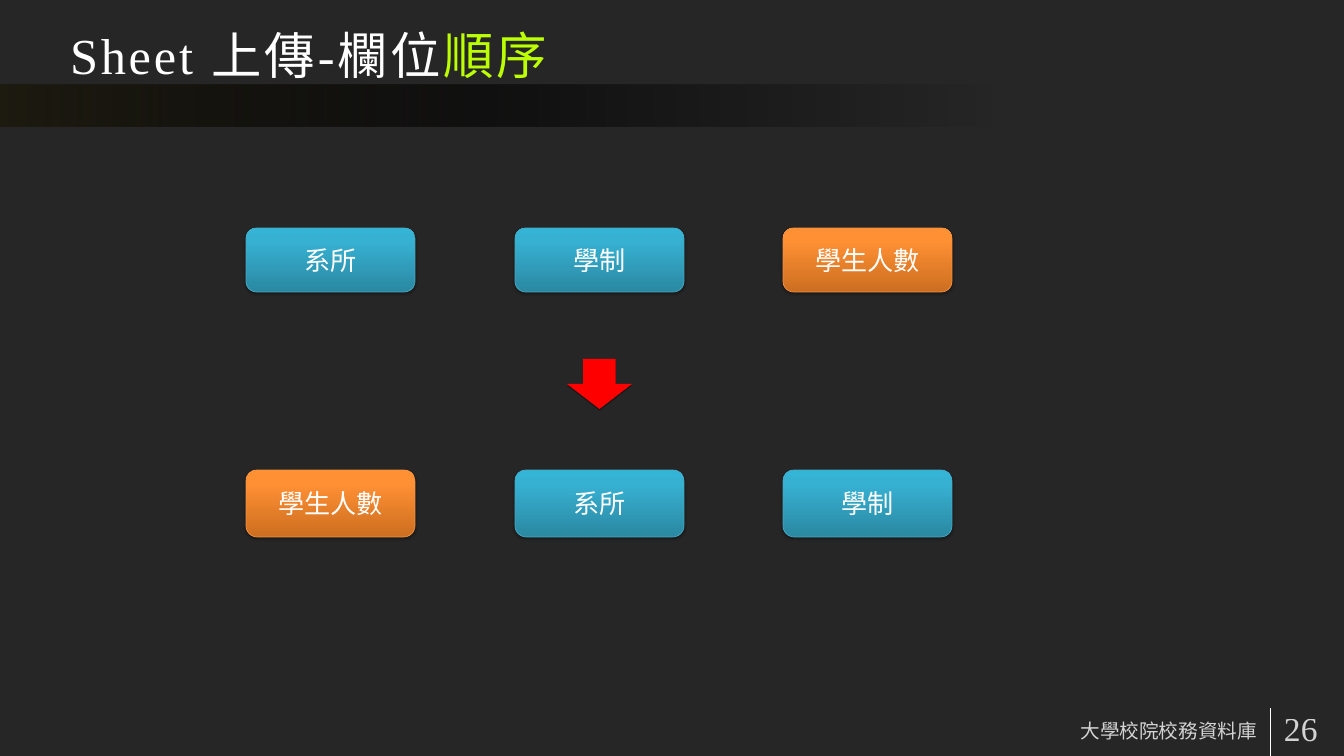
from lxml import etree
from pptx import Presentation
from pptx.dml.color import RGBColor
from pptx.enum.shapes import MSO_CONNECTOR, MSO_SHAPE
from pptx.enum.text import MSO_ANCHOR, MSO_AUTO_SIZE, PP_ALIGN
from pptx.oxml.ns import qn
from pptx.util import Emu, Pt

LEFT, CENTER, RIGHT = PP_ALIGN.LEFT, PP_ALIGN.CENTER, PP_ALIGN.RIGHT
MIDDLE, BOTTOM = MSO_ANCHOR.MIDDLE, MSO_ANCHOR.BOTTOM
SERIF, CJK = "Times New Roman", "Noto Sans CJK SC"
BACKGROUND = RGBColor(0x26, 0x26, 0x26)
WHITE = RGBColor(0xFF, 0xFF, 0xFF)
BLACK = RGBColor(0, 0, 0)
LIME = RGBColor(0xBB, 0xFF, 0x02)
RED = RGBColor(0xFF, 0, 0)
BLUE_LINE = RGBColor(0x46, 0xAA, 0xC5)
ORANGE_LINE = RGBColor(0xF6, 0x92, 0x40)

# Gradient stops: position %, colour, opacity %
BAND = [(0, RGBColor(0x1E, 0x1C, 0x11), 100), (39, BLACK, 54), (74, BLACK, 0)]
BLUE = [(0, RGBColor(0x2A, 0x88, 0xA2), 100), (80, RGBColor(0x37, 0xB1, 0xD2), 100),
        (100, RGBColor(0x34, 0xB4, 0xD6), 100)]
ORANGE = [(0, RGBColor(0xCC, 0x6E, 0x20), 100), (80, RGBColor(0xFF, 0x90, 0x34), 100),
          (100, RGBColor(0xFF, 0x91, 0x36), 100)]

# Content
TITLE = [("Sheet 上傳-欄位", WHITE), ("順序", LIME)]
FOOTER, PAGE = "大學校院校務資料庫", "26"
COUNT = "學生人數"
ROWS = [  # top, height, field names in column order
    (228, 64, ["系所", "學制", COUNT]),
    (470, 67, [COUNT, "系所", "學制"]),
]
COLUMNS, BOX_W = [246, 515, 783], 169


def px(n):
    return Emu(round(n * 914400 / 67.2))


def add_color(parent, color, opacity):
    clr = etree.SubElement(parent, qn("a:srgbClr"), val=str(color))
    if opacity < 100:
        etree.SubElement(clr, qn("a:alpha"), val=str(opacity * 1000))


def set_gradient(sp, stops, angle):
    grad = etree.Element(qn("a:gradFill"), rotWithShape="1")
    stop_list = etree.SubElement(grad, qn("a:gsLst"))
    for pos, color, opacity in stops:
        add_color(etree.SubElement(stop_list, qn("a:gs"), pos=str(pos * 1000)), color, opacity)
    etree.SubElement(grad, qn("a:lin"), ang=str(angle * 60000), scaled="0")
    sp._element.spPr.find(qn("a:prstGeom")).addnext(grad)


def set_shadow(sp, blur):
    effects = sp._element.spPr.find(qn("a:effectLst"))
    shadow = etree.SubElement(effects, qn("a:outerShdw"), blurRad=str(Pt(blur)),
                              dist=str(Pt(1.8)), dir="5400000", rotWithShape="0")
    add_color(shadow, BLACK, 35)


def set_text(sp, runs, size, font=SERIF, align=LEFT, anchor=MIDDLE,
             margins=(12, 6), spacing=0, opacity=100):
    tf = sp.text_frame
    tf.word_wrap = True
    tf.auto_size = MSO_AUTO_SIZE.NONE
    tf.vertical_anchor = anchor
    tf.margin_left = tf.margin_right = px(margins[0])
    tf.margin_top = tf.margin_bottom = px(margins[1])
    p = tf.paragraphs[0]
    p.alignment = align
    for text, color in runs:
        r = p.add_run()
        r.text = text
        r.font.size, r.font.name = Pt(size), font
        r.font.color.rgb = color
        props = r.font._element
        props.find(qn("a:latin")).addnext(etree.Element(qn("a:ea"), typeface=CJK))
        if spacing:
            props.set("spc", str(spacing * 100))
        if opacity < 100:
            etree.SubElement(props.find(".//" + qn("a:srgbClr")), qn("a:alpha"),
                             val=str(opacity * 1000))


def add_shape(slide, kind, x, y, w, h):
    sp = slide.shapes.add_shape(kind, px(x), px(y), px(w), px(h))
    sp.shadow.inherit = False
    sp.line.fill.background()
    return sp


def add_field(slide, name, x, y, h):
    sp = add_shape(slide, MSO_SHAPE.ROUNDED_RECTANGLE, x, y, BOX_W, h)
    stops, line = (ORANGE, ORANGE_LINE) if name == COUNT else (BLUE, BLUE_LINE)
    set_gradient(sp, stops, 270)
    sp.line.color.rgb = line
    sp.line.width = Pt(0.75)
    set_shadow(sp, 3.1)
    set_text(sp, [(name, WHITE)], 28, font=CJK, align=CENTER, margins=(3, 2))


def main():
    prs = Presentation()
    prs.slide_width, prs.slide_height = px(1344), px(756)
    slide = prs.slides.add_slide(prs.slide_layouts[5])
    slide.background.fill.solid()
    slide.background.fill.fore_color.rgb = BACKGROUND

    # Title and the band below it
    title = slide.shapes.title
    title.left, title.top, title.width, title.height = px(58), px(0), px(1210), px(91)
    set_text(title, TITLE, 54, anchor=BOTTOM, spacing=3)
    set_gradient(add_shape(slide, MSO_SHAPE.RECTANGLE, 0, 85, 1344, 42), BAND, 0)

    # Footer, divider and page number
    divider = slide.shapes.add_connector(MSO_CONNECTOR.STRAIGHT,
                                         px(1270), px(708), px(1270), px(756))
    divider.line.color.rgb = WHITE
    divider.line.width = Pt(0.75)
    etree.SubElement(divider._element.spPr, qn("a:effectLst"))
    footer = slide.shapes.add_textbox(px(481), px(708), px(788), px(40))
    set_text(footer, [(FOOTER, WHITE)], 21, align=RIGHT, anchor=BOTTOM, opacity=80)
    page = slide.shapes.add_textbox(px(1272), px(708), px(77), px(40))
    set_text(page, [(PAGE, WHITE)], 36, opacity=80)

    # Field order before and after
    for y, h, names in ROWS:
        for x, name in zip(COLUMNS, names):
            add_field(slide, name, x, y, h)

    # Arrow between the rows
    arrow = add_shape(slide, MSO_SHAPE.DOWN_ARROW, 567, 359, 65, 50)
    arrow.fill.solid()
    arrow.fill.fore_color.rgb = RED
    set_shadow(arrow, 0)

    prs.save("out.pptx")


if __name__ == "__main__":
    main()
